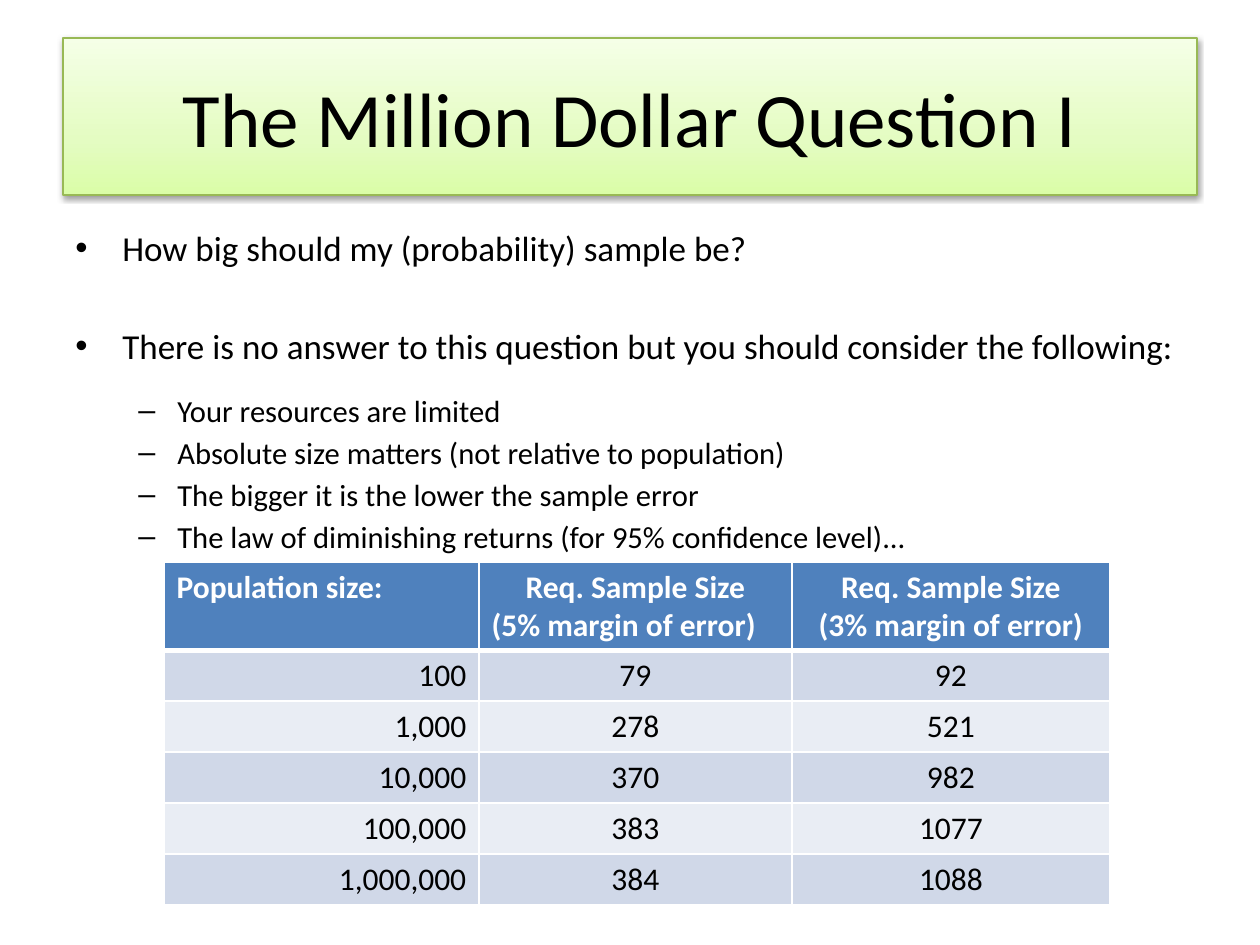
import pptx
import pptx.dml.color
import pptx.enum.text
import pptx.oxml
import pptx.oxml.ns
import pptx.util

PX = 914400 // 126
FONT = "Calibri"
BLACK, WHITE = "000000", "FFFFFF"
ALIGN = pptx.enum.text.PP_ALIGN
NAMESPACE = pptx.oxml.ns.nsdecls("a")

TITLE = "The Million Dollar Question I"
# Text, indent level, space before in points
BULLETS = [
    ("How big should my (probability) sample be?", 0, 0),
    ("There is no answer to this question but you should consider the following:", 0, 32),
    ("Your resources are limited", 1, 14.5),
    ("Absolute size matters (not relative to population)", 1, 3),
    ("The bigger it is the lower the sample error", 1, 3),
    ("The law of diminishing returns (for 95% confidence level)...", 1, 3),
]
# Bullet, left margin in px, hanging indent in px, size in points
LEVELS = [("•", 47, 47, 20), ("–", 102, 39, 17.5)]

HEADERS = [
    "Population size:",
    "Req. Sample Size\n(5% margin of error)",
    "Req. Sample Size\n(3% margin of error)",
]
SAMPLE_SIZES = [
    ("100", "79", "92"),
    ("1,000", "278", "521"),
    ("10,000", "370", "982"),
    ("100,000", "383", "1077"),
    ("1,000,000", "384", "1088"),
]
COLUMN_WIDTHS = [315, 313, 318]
HEADER_HEIGHT, ROW_HEIGHT = 88, 51
HEADER_FILL, BAND_FILLS = "4F81BD", ["D0D8E8", "E9EDF4"]


def px(*lengths):
    return [pptx.util.Emu(length * PX) for length in lengths]


def color(value):
    return pptx.dml.color.RGBColor.from_string(value)


def format_paragraph(paragraph, size, value=BLACK, align=ALIGN.LEFT, bold=False):
    paragraph.alignment = align
    for run in paragraph.runs:
        run.font.name = FONT
        run.font.size = pptx.util.Pt(size)
        run.font.bold = bold
        run.font.color.rgb = color(value)


def add_title(slide):
    title = slide.shapes.title
    title.left, title.top, title.width, title.height = px(63, 38, 1134, 157)
    title.text_frame.text = TITLE
    title.text_frame.vertical_anchor = pptx.enum.text.MSO_ANCHOR.MIDDLE
    format_paragraph(title.text_frame.paragraphs[0], 44, align=ALIGN.CENTER)

    # Three-stop gradient rising from the bottom edge
    stops = "".join(
        f'<a:gs pos="{position * 1000}"><a:srgbClr val="{value}"/></a:gs>'
        for position, value in [(0, "DAFDA7"), (35, "E4FCC2"), (100, "F5FFE7")]
    )
    properties = title.element.spPr
    properties.append(pptx.oxml.parse_xml(
        f'<a:gradFill {NAMESPACE} rotWithShape="1"><a:gsLst>{stops}</a:gsLst>'
        '<a:lin ang="16200000" scaled="0"/></a:gradFill>'
    ))
    title.line.color.rgb = color("98B955")
    title.line.width = pptx.util.Pt(0.75)

    # Soft shadow below the bar
    properties.append(pptx.oxml.parse_xml(
        f'<a:effectLst {NAMESPACE}><a:outerShdw blurRad="{pptx.util.Pt(3.1)}" '
        f'dist="{pptx.util.Pt(1.6)}" dir="5400000" rotWithShape="0">'
        f'<a:srgbClr val="{BLACK}"><a:alpha val="38000"/></a:srgbClr>'
        '</a:outerShdw></a:effectLst>'
    ))


def add_bullets(slide):
    frame = slide.shapes.add_textbox(*px(63, 220, 1134, 341)).text_frame
    frame.word_wrap = True
    frame.text = "\n".join(text for text, _, _ in BULLETS)
    for paragraph, (_, level, space) in zip(frame.paragraphs, BULLETS):
        bullet, margin, hanging, size = LEVELS[level]
        format_paragraph(paragraph, size)
        paragraph.level = level
        paragraph.space_before = pptx.util.Pt(space)
        properties = paragraph._p.get_or_add_pPr()
        properties.set("marL", str(margin * PX))
        properties.set("indent", str(-hanging * PX))
        for xml in ('<a:buFont {} typeface="Arial"/>', '<a:buChar {} char="%s"/>' % bullet):
            properties.append(pptx.oxml.parse_xml(xml.format(NAMESPACE)))


def set_borders(cell, bottom_width):
    properties = cell._tc.get_or_add_tcPr()
    for side, width in [("L", 1), ("R", 1), ("T", 1), ("B", bottom_width)]:
        properties.append(pptx.oxml.parse_xml(
            f'<a:ln{side} {NAMESPACE} w="{pptx.util.Pt(width)}"><a:solidFill>'
            f'<a:srgbClr val="{WHITE}"/></a:solidFill></a:ln{side}>'
        ))


def fill_cell(cell, text, fill, value, align, bold=False, bottom_width=1):
    set_borders(cell, bottom_width)
    cell.fill.solid()
    cell.fill.fore_color.rgb = color(fill)
    cell.text_frame.text = text
    for paragraph in cell.text_frame.paragraphs:
        format_paragraph(paragraph, 18, value, align, bold)


def add_sample_table(slide):
    height = HEADER_HEIGHT + ROW_HEIGHT * len(SAMPLE_SIZES)
    table = slide.shapes.add_table(
        len(SAMPLE_SIZES) + 1, len(HEADERS), *px(164, 562, sum(COLUMN_WIDTHS), height)
    ).table
    for column, width in zip(table.columns, px(*COLUMN_WIDTHS)):
        column.width = width
    for index, row in enumerate(table.rows):
        row.height = px(ROW_HEIGHT if index else HEADER_HEIGHT)[0]

    # Header row
    for column, text in enumerate(HEADERS):
        align = ALIGN.CENTER if column else ALIGN.LEFT
        fill_cell(table.cell(0, column), text, HEADER_FILL, WHITE, align, True, 3)
    table.cell(0, 1).text_frame.paragraphs[1].alignment = ALIGN.LEFT

    # Banded value rows
    for row, values in enumerate(SAMPLE_SIZES):
        for column, text in enumerate(values):
            align = ALIGN.CENTER if column else ALIGN.RIGHT
            fill_cell(table.cell(row + 1, column), text, BAND_FILLS[row % 2], BLACK, align)


def main():
    presentation = pptx.Presentation()
    presentation.slide_width = pptx.util.Inches(10)
    presentation.slide_height = pptx.util.Inches(7.5)
    slide = presentation.slides.add_slide(presentation.slide_layouts[5])
    add_title(slide)
    add_bullets(slide)
    add_sample_table(slide)
    presentation.save("out.pptx")


if __name__ == "__main__":
    main()
